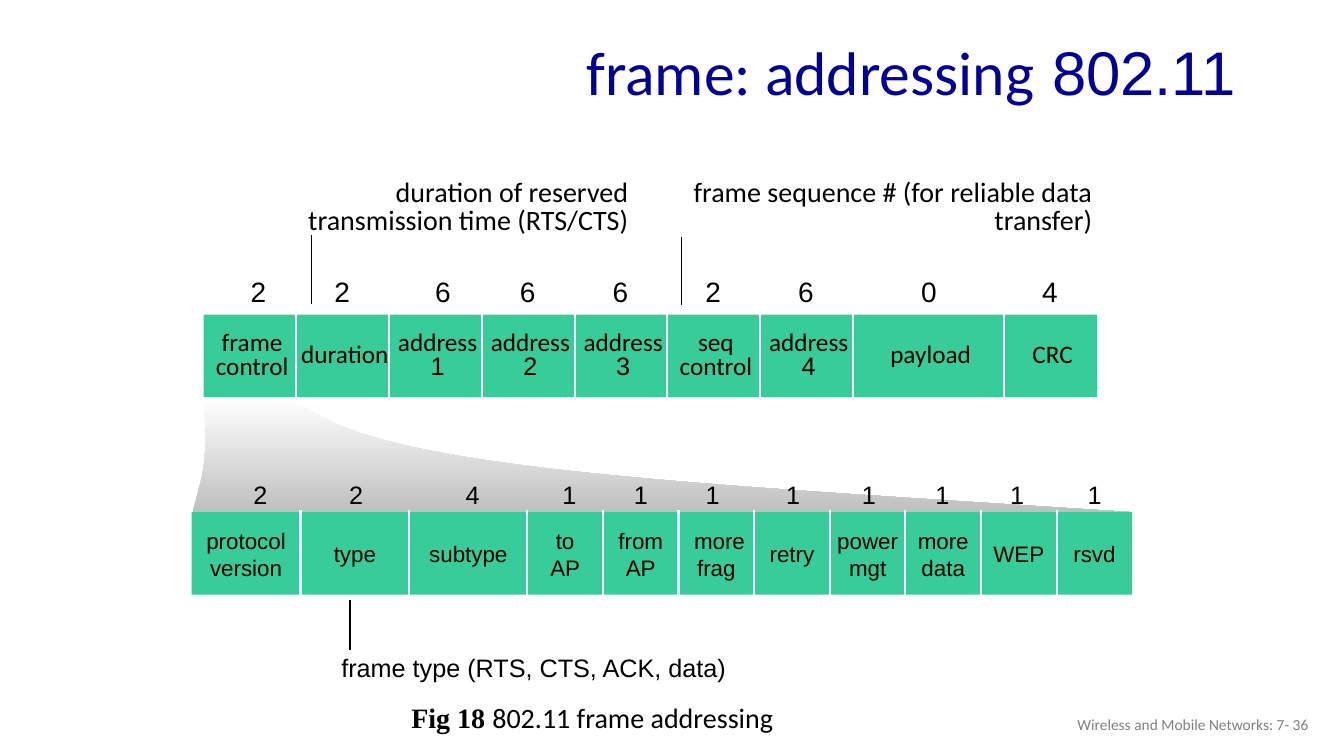
from lxml import etree
from pptx import Presentation
from pptx.dml.color import RGBColor
from pptx.enum.shapes import MSO_CONNECTOR, MSO_SHAPE
from pptx.enum.text import MSO_ANCHOR, MSO_AUTO_SIZE, PP_ALIGN
from pptx.oxml.ns import qn
from pptx.util import Inches, Pt

RIGHT, CENTER = PP_ALIGN.RIGHT, PP_ALIGN.CENTER
TOP, MIDDLE = MSO_ANCHOR.TOP, MSO_ANCHOR.MIDDLE
FIT, FIXED = MSO_AUTO_SIZE.SHAPE_TO_FIT_TEXT, MSO_AUTO_SIZE.NONE
STRAIGHT, RECT = MSO_CONNECTOR.STRAIGHT, MSO_SHAPE.RECTANGLE

BLACK, WHITE, NAVY, GRAY = "000000", "FFFFFF", "000099", "808080"
GREEN, SHADE = "37CC99", "BFBFBF"

TITLE = "802.11 frame: addressing"
FOOTER = "Wireless and Mobile Networks: 7- 36"
CAPTION = ("Fig 18 ", "802.11 frame addressing")

# name, bytes, cell width, shift of the byte count from the cell centre
FRAME_FIELDS = [
    ("frame\ncontrol", "2", 0.92, 0.09),
    ("duration", "2", 0.92, 0),
    ("address\n1", "6", 0.92, 0.08),
    ("address\n2", "6", 0.92, 0),
    ("address\n3", "6", 0.92, 0),
    ("seq\ncontrol", "2", 0.92, 0),
    ("address\n4", "6", 0.92, 0),
    ("payload", "0 -", 1.5, -0.08),
    ("CRC", "4", 0.92, 0),
]
# name, bits, cell width, shift of the bit count from the cell centre
CONTROL_FIELDS = [
    ("protocol\nversion", "2", 1.08, 0.14),
    ("type", "2", 1.08, 0.01),
    ("subtype", "4", 1.17, 0.04),
    ("to\nAP", "1", 0.75, 0.04),
    ("from\nAP", "1", 0.75, 0),
    ("more \nfrag", "1", 0.75, -0.04),
    ("retry", "1", 0.75, 0.01),
    ("power\nmgt", "1", 0.75, 0.01),
    ("more\ndata", "1", 0.75, -0.01),
    ("WEP", "1", 0.75, -0.02),
    ("rsvd", "1", 0.75, 0),
]
# text, box, wrap, format, pointer x, pointer top, pointer bottom
NOTES = [
    ("duration of reserved \ntransmission time (RTS/CTS)", (2.92, 1.73, 3.41, 0.68),
     False, dict(size=20, spacing=0.85), 3.09, 2.33, 3.02),
    ("frame sequence # (for reliable data transfer)", (6.62, 1.73, 4.31, 0.68),
     True, dict(size=20, spacing=0.85), 6.76, 2.35, 3.03),
    ("frame type (RTS, CTS, ACK, data)", (2.06, 6.42, 5.24, 0.4),
     True, dict(size=18, font="Arial"), 3.47, 5.95, 6.45),
]
# Bezier edges of the wedge joining the two rows
WEDGE_LEFT = [(2.02, 3.94), (2.07, 4.6), (2.01, 4.71), (1.91, 5.09)]
WEDGE_RIGHT = [(11.21, 5.08), (6.59, 4.78), (3.6, 4.65), (2.92, 3.94)]
BAND_H, LABEL_H = 0.82, 0.67


def rgb(color):
    return RGBColor.from_string(color)


def add_run(p, text, size=20, font="Calibri", color=BLACK, bold=False):
    r = p.add_run()
    r.text = text
    r.font.size, r.font.name, r.font.bold = Pt(size), font, bold
    r.font.color.rgb = rgb(color)
    # digits in right-to-left paragraphs use the complex-script font
    etree.SubElement(r.font._element, qn("a:cs"), typeface="Arial")


def write(tf, text, align=RIGHT, spacing=1.0, anchor=TOP, wrap=True, fit=FIXED, **run):
    tf.word_wrap, tf.auto_size, tf.vertical_anchor = wrap, fit, anchor
    for i, line in enumerate(text.split("\n")):
        p = tf.add_paragraph() if i else tf.paragraphs[0]
        p.alignment, p.line_spacing = align, spacing
        p._p.get_or_add_pPr().set("rtl", "1")
        add_run(p, line, **run)
    return p


def text_box(box, text, **fmt):
    return write(s.shapes.add_textbox(*map(Inches, box)).text_frame, text, **fmt)


def vertical_line(x, top, bottom, color, width):
    line = s.shapes.add_connector(STRAIGHT, *map(Inches, (x, top, x, bottom)))
    line.line.color.rgb, line.line.width = rgb(color), Pt(width)
    etree.SubElement(line._element.spPr, qn("a:effectLst"))


def field_row(fields, left, top, count_gap, label_shift, count_fmt, label_fmt):
    """Draw sizes above a band that is split into named cells."""
    edges = [left]
    for field in fields:
        edges.append(edges[-1] + field[2])
    for (_, count, width, shift), x in zip(fields, edges):
        w = 0.25 + 0.09 * len(count)
        box = (x + width / 2 + shift - w / 2, top - count_gap, w, 0.44)
        text_box(box, count, wrap=False, fit=FIT, **count_fmt)

    band = s.shapes.add_shape(RECT, *map(Inches, (left, top, edges[-1] - left, BAND_H)))
    band.shadow.inherit = False
    band.fill.solid()
    band.fill.fore_color.rgb = rgb(GREEN)
    band.line.fill.background()

    for x in edges[1:-1]:
        vertical_line(x, top - 0.02, top + 0.86, WHITE, 1.5)
    for (name, _, width, _), x in zip(fields, edges):
        box = (x + label_shift, top + 0.08, width, LABEL_H)
        text_box(box, name, align=CENTER, anchor=MIDDLE, wrap=False, **label_fmt)


def bezier(points, steps=40):
    (x0, y0), (x1, y1), (x2, y2), (x3, y3) = points
    for i in range(steps + 1):
        t = i / steps
        a, b, c, d = (1 - t) ** 3, 3 * t * (1 - t) ** 2, 3 * t * t * (1 - t), t ** 3
        yield (Inches(a * x0 + b * x1 + c * x2 + d * x3),
               Inches(a * y0 + b * y1 + c * y2 + d * y3))


def wedge():
    outline = [*bezier(WEDGE_LEFT), *bezier(WEDGE_RIGHT)]
    builder = s.shapes.build_freeform(*outline[0])
    builder.add_line_segments(outline[1:], close=True)
    sp = builder.convert_to_shape()
    sp.shadow.inherit = False
    sp.line.fill.background()
    sp.fill.gradient()
    sp.fill.gradient_angle = 270
    for stop, color, position in zip(sp.fill.gradient_stops, (WHITE, SHADE), (0, 1)):
        stop.color.rgb, stop.position = rgb(color), position


prs = Presentation()
prs.slide_width, prs.slide_height = Inches(13.33), Inches(7.5)
s = prs.slides.add_slide(prs.slide_layouts[5])

title = s.shapes.title
title.left, title.top, title.width, title.height = map(Inches, (0.86, 0.26, 11.5, 0.98))
write(title.text_frame, TITLE, spacing=0.9, anchor=MIDDLE, size=44, color=NAVY)
text_box((10.08, 7.05, 3, 0.4), FOOTER, size=11, color=GRAY)

field_row(FRAME_FIELDS, 2.02, 3.12, 0.45, 0.02,
          dict(size=20), dict(size=18, spacing=0.8))
wedge()
field_row(CONTROL_FIELDS, 1.9, 5.08, 0.37, 0,
          dict(size=18, font="Arial"), dict(size=16, font="Arial"))

for text, box, wrap, fmt, x, top, bottom in NOTES:
    text_box(box, text, wrap=wrap, fit=FIT, **fmt)
    vertical_line(x, top, bottom, BLACK, 1)

caption = text_box((3.88, 6.9, 3.89, 0.44), CAPTION[0], wrap=False, fit=FIT,
                   font="Times New Roman", bold=True)
add_run(caption, CAPTION[1])

prs.save("out.pptx")
